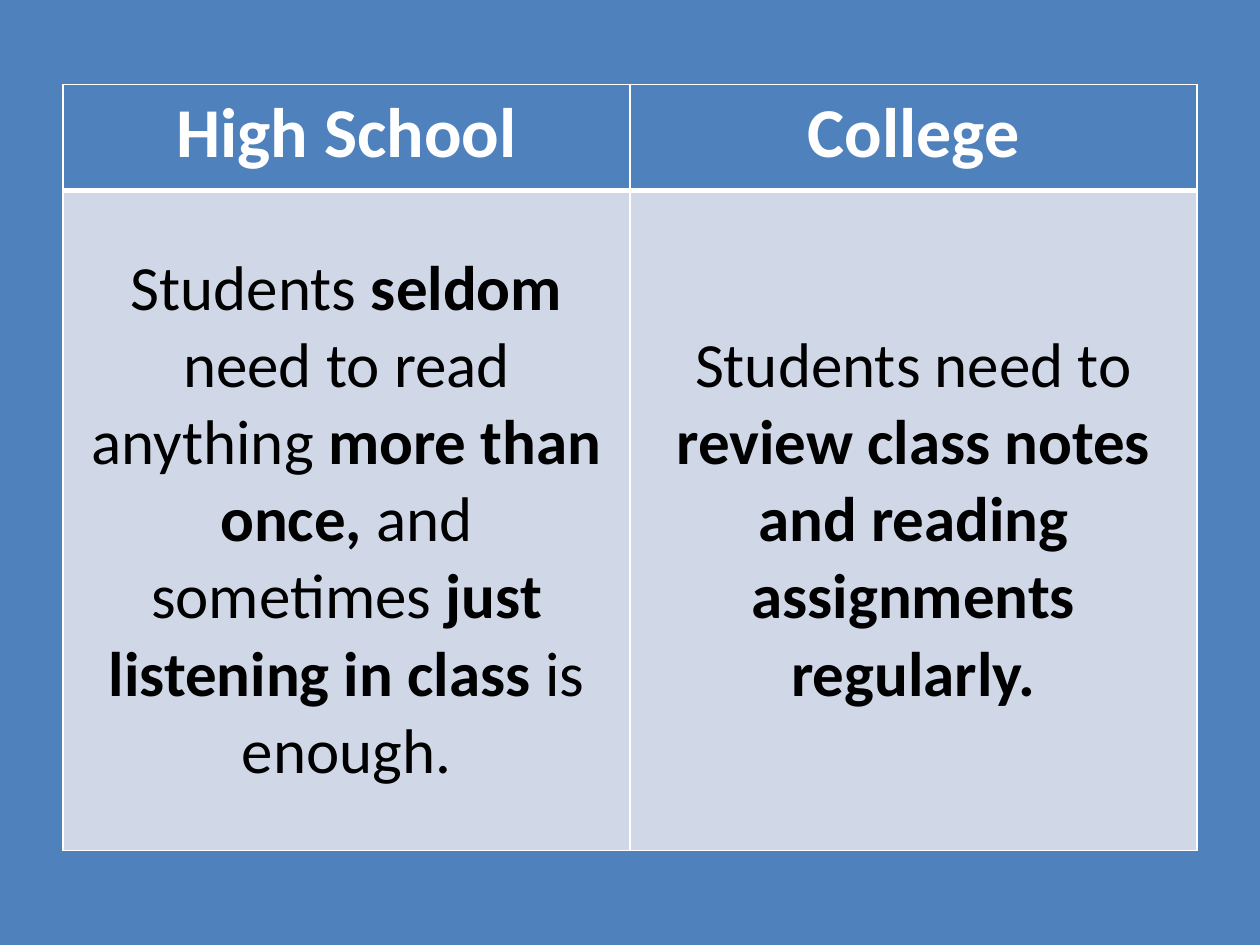
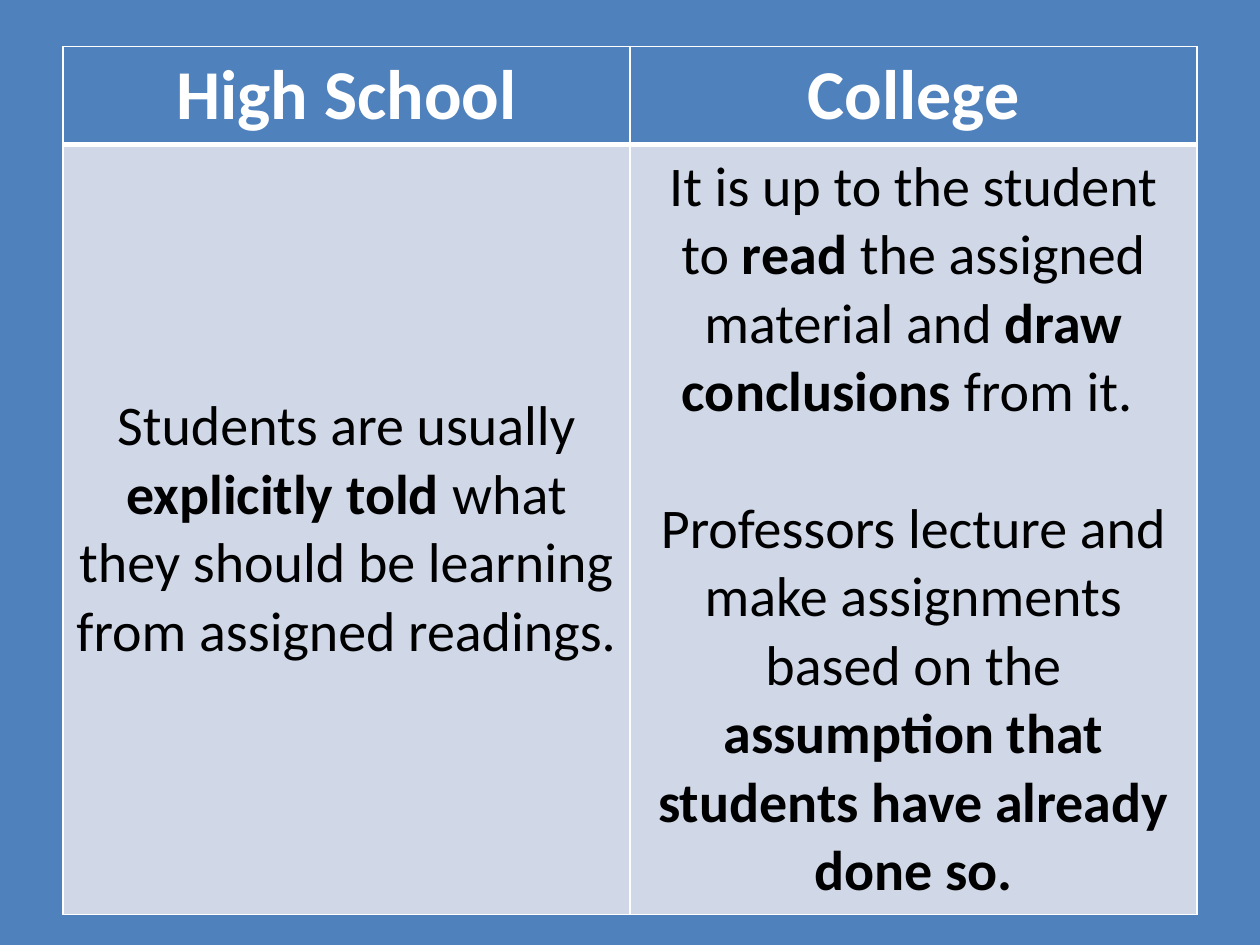
from lxml.etree import SubElement
from pptx import Presentation
from pptx.dml.color import RGBColor
from pptx.enum.text import MSO_ANCHOR, PP_ALIGN
from pptx.oxml.ns import qn
from pptx.util import Inches, Pt

COLORS = {"blue": "4F81BD", "pale": "D0D8E8", "white": "FFFFFF", "black": "000000"}
FONT = "Calibri"
HEADINGS = ["High School", "College"]

COMPARISONS = [
    {
        "top": 0.67, "rows": [0.84, 5.24], "size": 36,
        "texts": [
            ["Students **seldom** need to read anything **more than once,** and "
             "sometimes **just listening in class **is enough."],
            ["Students need to **review class notes and reading assignments regularly.**"],
        ],
    },
    {
        "top": 0.37, "rows": [0.76, 6.11], "size": 32,
        "texts": [
            ["Students are usually **explicitly told **what they should be learning "
             "from assigned readings."],
            ["It is up to the student to **read** the assigned material and "
             "**draw conclusions** from it. ",
             "Professors lecture and make assignments based on the "
             "**assumption that students have already done so.**"],
        ],
    },
]


def write_cell(cell, paragraphs, size, color, fill, anchor=MSO_ANCHOR.TOP):
    """Fill a cell with centred paragraphs; ** switches bold on and off."""
    cell.fill.solid()
    cell.fill.fore_color.rgb = RGBColor.from_string(COLORS[fill])
    cell.vertical_anchor = anchor
    frame = cell.text_frame
    for number, text in enumerate(paragraphs):
        para = frame.add_paragraph() if number else frame.paragraphs[0]
        para.alignment = PP_ALIGN.CENTER
        if number:
            para.space_before = Pt(round(size * 1.22))  # one line of Calibri
        for index, part in enumerate(text.split("**")):
            if part:
                span = para.add_run()
                span.text = part
                span.font.name = FONT
                span.font.size = Pt(size)
                span.font.bold = index % 2 == 1
                span.font.color.rgb = RGBColor.from_string(COLORS[color])


def set_borders(cell, **widths):
    """Draw white cell borders; widths are points by side (L, R, T, B)."""
    properties = cell._tc.get_or_add_tcPr()
    for position, (side, width) in enumerate(widths.items()):
        line = SubElement(properties, qn(f"a:ln{side}"), w=str(Pt(width)))
        fill = SubElement(line, qn("a:solidFill"))
        SubElement(fill, qn("a:srgbClr"), val=COLORS["white"])
        properties.insert(position, line)  # borders come before the fill


deck = Presentation()
deck.slide_width, deck.slide_height = Inches(10), Inches(7.5)
background = deck.slide_master.background.fill
background.solid()
background.fore_color.rgb = RGBColor.from_string(COLORS["blue"])
blank_layout = deck.slide_layouts[6]

for comparison in COMPARISONS:
    page = deck.slides.add_slide(blank_layout)
    heights = comparison["rows"]
    table = page.shapes.add_table(
        2, 2, Inches(0.5), Inches(comparison["top"]), Inches(9), Inches(sum(heights))
    ).table
    for row, height in zip(table.rows, heights):
        row.height = Inches(height)

    for column, heading in enumerate(HEADINGS):
        header, body = table.cell(0, column), table.cell(1, column)
        write_cell(header, [f"**{heading}**"], 40, "white", "blue")
        set_borders(header, L=1, R=1, T=1, B=3)
        write_cell(body, comparison["texts"][column], comparison["size"],
                   "black", "pale", MSO_ANCHOR.MIDDLE)
        set_borders(body, L=1, R=1, T=3, B=1)

deck.save("out.pptx")
